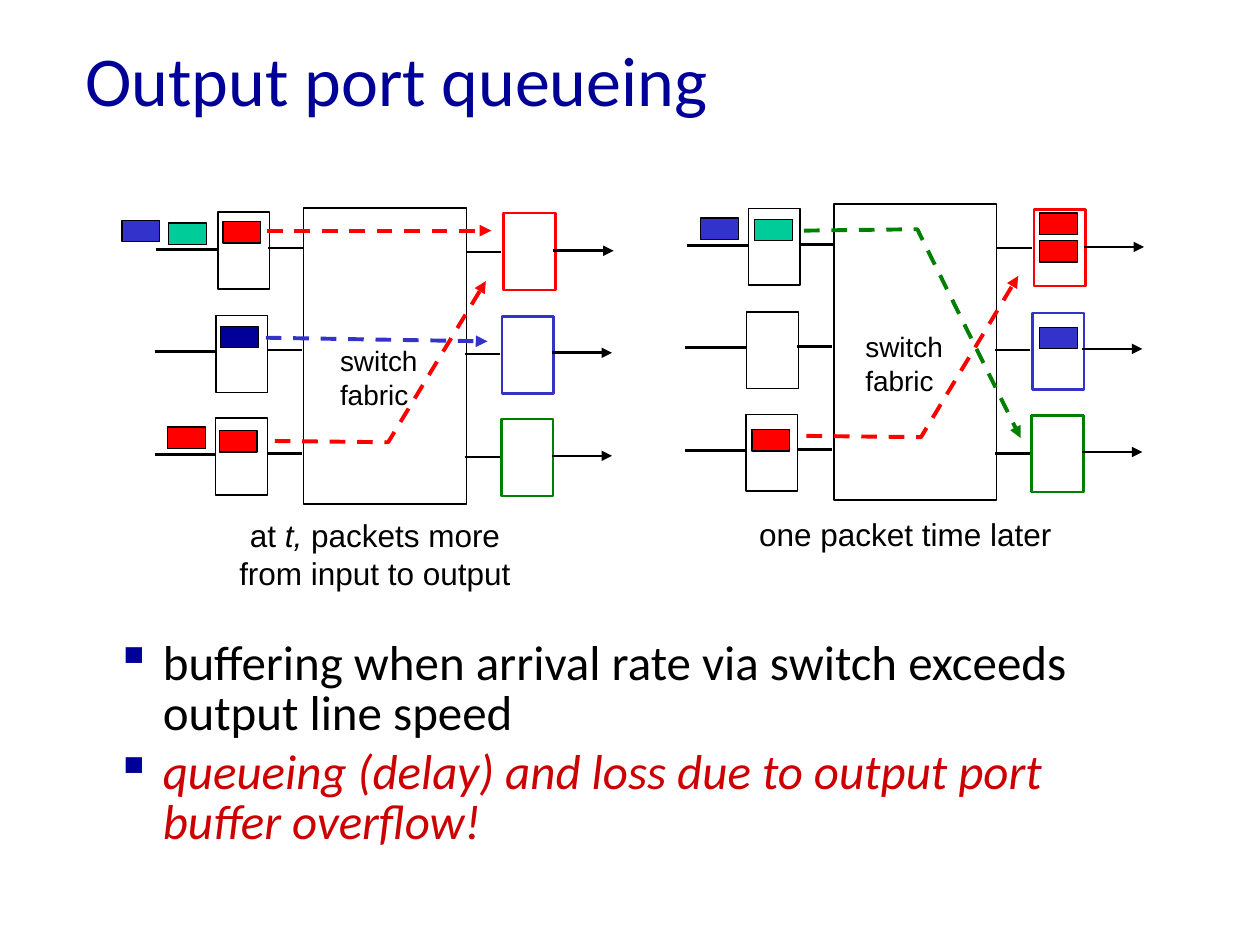
from dataclasses import dataclass

from lxml.etree import SubElement
from pptx import Presentation
from pptx.dml.color import RGBColor
from pptx.enum.dml import MSO_LINE_DASH_STYLE as Dash
from pptx.enum.shapes import MSO_CONNECTOR as Connector, MSO_SHAPE as Shape
from pptx.enum.text import MSO_ANCHOR as Anchor, PP_ALIGN as Align
from pptx.oxml.ns import qn
from pptx.util import Pt


@dataclass(frozen=True)
class Theme:
    black: str = "000000"
    white: str = "FFFFFF"
    navy: str = "000099"
    red: str = "FF0000"
    blue: str = "3333CC"
    green: str = "008000"
    teal: str = "00CC99"
    warning: str = "CC0000"
    heading_font: str = "Calibri"
    diagram_font: str = "Arial"
    title_size: float = 40
    bullet_size: float = 28
    caption_size: float = 18
    label_size: float = 16
    thin: float = 0.75
    medium: float = 1.5
    thick: float = 2.25


@dataclass(frozen=True)
class Switch:
    left: float
    top: float


@dataclass(frozen=True)
class Packet:
    left: float
    top: float
    color: str


@dataclass(frozen=True)
class Flow:
    points: tuple[tuple[float, float], ...]
    color: str


@dataclass(frozen=True)
class Label:
    left: float
    top: float
    width: float
    height: float
    lines: tuple[str, ...]
    size: float
    font: str = Theme.diagram_font
    color: str = Theme.black
    align: Align = Align.LEFT
    wrap: bool = True
    anchor: Anchor = Anchor.TOP


THEME = Theme()

# All positions are in points
SWITCHES = (Switch(173.5, 118.8), Switch(476.6, 116.6))
FABRIC_SIZE = (92.9, 169.2)
PORT_SIZE = (29.5, 43.9)
PACKET_SIZE = (21.6, 12.2)
PORT_ROWS = ((0, 0), (-1, 59.2), (-1.3, 117.7))  # shift of each port row
WIRE_ROWS = ((0, 0), (-0.9, 58.3), (-0.9, 117.2))
OUTPUT_COLORS = (THEME.red, THEME.blue, THEME.green)
# Wires of the first row: start, end, height, arrowhead
WIRES = ((-84.2, -49.2, 23.8, False), (-20.2, 0, 23, False),
         (92.9, 113, 25.2, False), (142.6, 177.1, 24.5, True))

PACKETS = (
    # at time t
    Packet(127.4, 126.7, THEME.red), Packet(126, 186.5, THEME.navy),
    Packet(125.3, 246.2, THEME.red), Packet(96.5, 127.4, THEME.teal),
    Packet(95.8, 244.1, THEME.red), Packet(69.8, 126, THEME.blue),
    # one packet time later
    Packet(594, 121.7, THEME.red), Packet(594, 187.2, THEME.blue),
    Packet(594, 137.5, THEME.red), Packet(431.3, 125.3, THEME.teal),
    Packet(429.8, 245.5, THEME.red), Packet(400.3, 124.6, THEME.blue),
)
FLOWS = (
    Flow(((152.6, 131.8), (280.8, 131.8)), THEME.red),
    Flow(((157, 252), (221.8, 252.7), (277.6, 160.6)), THEME.red),
    Flow(((460.8, 249.1), (526.3, 249.8), (581.8, 157.7)), THEME.red),
    Flow(((459.4, 131.8), (524.2, 131), (583.2, 250.3)), THEME.green),
    Flow(((151.9, 193), (278.6, 195.1)), THEME.blue),
)
TITLE = Label(41.8, 15.8, 612, 57.6, ("Output port queueing",), THEME.title_size,
              THEME.heading_font, THEME.navy, anchor=Anchor.MIDDLE)
BULLETS = Label(59, 362.2, 612, 93.6,
                ("buffering when arrival rate via switch exceeds output line speed",
                 "queueing (delay) and loss due to output port buffer overflow!"),
                THEME.bullet_size, THEME.heading_font)
FABRIC_LINES = ("switch", "fabric")
FABRIC_LABELS = (
    Label(187.2, 193, 59, 46.1, FABRIC_LINES, THEME.label_size, wrap=False),
    Label(487.4, 185, 59, 46.1, FABRIC_LINES, THEME.label_size, wrap=False),
)
# Text between asterisks is italic
CAPTIONS = (
    Label(117.4, 291.6, 193.7, 50.4, ("at *t,* packets more", "from input to output"),
          THEME.caption_size, align=Align.CENTER),
    Label(420.5, 290.9, 193.7, 28.8, ("one packet time later",),
          THEME.caption_size, align=Align.CENTER),
)


def rgb(color: str) -> RGBColor:
    return RGBColor.from_string(color)


def style_line(line, color: str, width: float) -> None:
    line.color.rgb = rgb(color)
    line.width = Pt(width)


def add_arrowhead(line) -> None:
    SubElement(line._get_or_add_ln(), qn("a:tailEnd"), type="triangle")


def draw_box(slide, left: float, top: float, size: tuple[float, float], fill: str,
             outline: str = THEME.black, width: float = THEME.thin) -> None:
    box = slide.shapes.add_shape(Shape.RECTANGLE, Pt(left), Pt(top), *map(Pt, size))
    box.shadow.inherit = False
    box.fill.solid()
    box.fill.fore_color.rgb = rgb(fill)
    style_line(box.line, outline, width)


def draw_wire(slide, start: tuple[float, float], end: tuple[float, float], color: str,
              width: float, arrow: bool, dashed: bool = False) -> None:
    wire = slide.shapes.add_connector(Connector.STRAIGHT, *map(Pt, start + end))
    style_line(wire.line, color, width)
    if dashed:
        wire.line.dash_style = Dash.DASH
    if arrow:
        add_arrowhead(wire.line)
    SubElement(wire._element.spPr, qn("a:effectLst"))


def draw_flow(slide, flow: Flow) -> None:
    if len(flow.points) == 2:
        draw_wire(slide, *flow.points, flow.color, THEME.thick, arrow=True, dashed=True)
        return
    first, *rest = [(Pt(x), Pt(y)) for x, y in flow.points]
    builder = slide.shapes.build_freeform(*first)
    builder.add_line_segments(rest, close=False)
    route = builder.convert_to_shape()
    route.shadow.inherit = False
    route.fill.background()
    style_line(route.line, flow.color, THEME.thick)
    route.line.dash_style = Dash.DASH
    add_arrowhead(route.line)


def draw_switch(slide, switch: Switch) -> None:
    x, y = switch.left, switch.top
    draw_box(slide, x, y, FABRIC_SIZE, THEME.white)
    for (dx, dy), color in zip(PORT_ROWS, OUTPUT_COLORS):
        draw_box(slide, x - 49 + dx, y + 2.4 + dy, PORT_SIZE, THEME.white)
        draw_box(slide, x + 114.3 + dx, y + 3 + dy, PORT_SIZE, THEME.white,
                 color, THEME.medium)
    for start, end, height, arrow in WIRES:
        for dx, dy in WIRE_ROWS:
            level = y + height + dy
            draw_wire(slide, (x + start + dx, level), (x + end + dx, level),
                      THEME.black, THEME.medium, arrow)


def draw_label(slide, label: Label):
    frame = slide.shapes.add_textbox(Pt(label.left), Pt(label.top), Pt(label.width),
                                     Pt(label.height)).text_frame
    frame.word_wrap = label.wrap
    frame.vertical_anchor = label.anchor
    frame.text = "\n".join(label.lines)
    for paragraph, line in zip(frame.paragraphs, label.lines):
        paragraph.alignment = label.align
        paragraph.text = ""
        for index, part in enumerate(line.split("*")):
            run = paragraph.add_run()
            run.text = part
            font = run.font
            font.name, font.size = label.font, Pt(label.size)
            font.color.rgb = rgb(label.color)
            font.italic = index % 2 == 1
    return frame


def add_bullet(paragraph) -> None:
    paragraph.line_spacing = 0.85
    paragraph.space_before = Pt(0.2 * THEME.bullet_size)
    props = paragraph._p.get_or_add_pPr()
    props.set("marL", str(Pt(27)))
    props.set("indent", str(Pt(-27)))
    SubElement(SubElement(props, qn("a:buClr")), qn("a:srgbClr"), val=THEME.navy)
    SubElement(props, qn("a:buChar"), char="▪")


def main() -> None:
    prs = Presentation()
    prs.slide_width, prs.slide_height = Pt(720), Pt(540)
    slide = prs.slides.add_slide(prs.slide_layouts[6])

    # Title and bullets
    draw_label(slide, TITLE)
    points = draw_label(slide, BULLETS).paragraphs
    for point in points:
        add_bullet(point)
    warning = points[-1].runs[0].font
    warning.italic = True
    warning.color.rgb = rgb(THEME.warning)

    # Switches, packets and the routes between ports
    for switch in SWITCHES:
        draw_switch(slide, switch)
    for packet in PACKETS:
        draw_box(slide, packet.left, packet.top, PACKET_SIZE, packet.color)
    for flow in FLOWS:
        draw_flow(slide, flow)

    # Labels
    for label in FABRIC_LABELS + CAPTIONS:
        draw_label(slide, label)
    prs.save("out.pptx")


if __name__ == "__main__":
    main()
